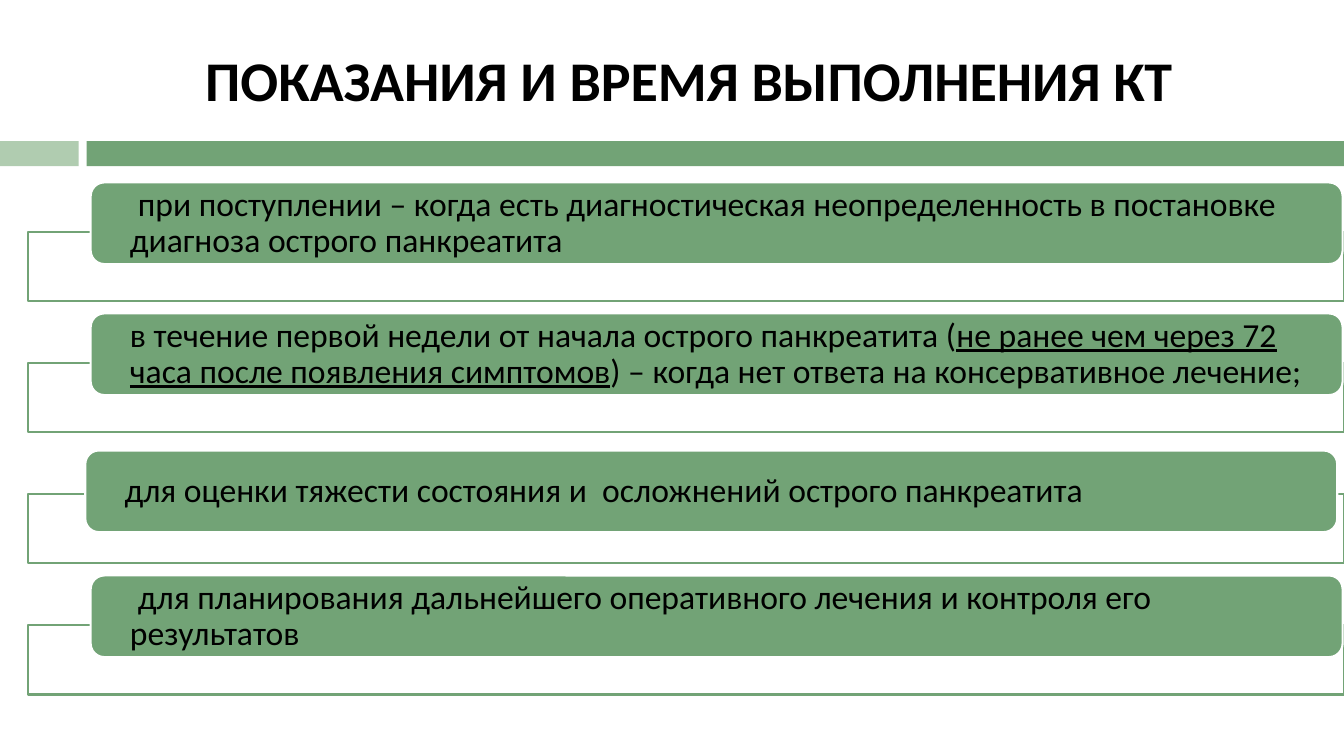
"""Build the slide on indications for and timing of CT."""
import dataclasses

import lxml.etree
import pptx
import pptx.dml.color
import pptx.enum.shapes
import pptx.enum.text
import pptx.oxml.ns
import pptx.util

SHAPES = pptx.enum.shapes.MSO_SHAPE
WIDTH = pptx.util.Inches(13.333)
HEIGHT = pptx.util.Inches(7.5)
ROW_PITCH = 17.33
FRAME_TOP = 30.67
CARD_TOP = 24.13


@dataclasses.dataclass(frozen=True)
class Theme:
    """Colours, font and sizes of the slide."""
    green: str = "72A376"
    pale_green: str = "B0CCB0"
    white: str = "FFFFFF"
    black: str = "000000"
    font: str = "Calibri"
    title_size: int = 40
    body_size: int = 24
    line_width: float = 1.5


@dataclasses.dataclass(frozen=True)
class Indication:
    """Spans of one card, the underlined one's index, first-line indent and card shift."""
    spans: tuple
    underlined: int = -1
    indent: float = 0
    shift: tuple = (0, 0)


THEME = Theme()
INDICATIONS = (
    Indication(("при поступлении – когда есть диагностическая неопределенность "
                "в постановке диагноза острого панкреатита",), indent=0.08),
    Indication(("в течение первой недели от начала острого панкреатита (",
                "не ранее чем через 72 часа после появления симптомов",
                ") – когда нет ответа на консервативное лечение;"), underlined=1),
    Indication(("для оценки тяжести состояния и  осложнений острого панкреатита",),
               shift=(-0.4, 0.8)),
    Indication(("для планирования дальнейшего оперативного лечения "
                "и контроля его результатов",), indent=0.08),
)


def place(left, top, width, height):
    """Turn percentages of the slide into lengths."""
    return (round(WIDTH * left / 100), round(HEIGHT * top / 100),
            round(WIDTH * width / 100), round(HEIGHT * height / 100))


def rgb(colour):
    """Return a colour object for a hex string."""
    return pptx.dml.color.RGBColor.from_string(colour)


def style_font(font, size, bold=False):
    """Give a font the theme's face and text colour."""
    font.name = THEME.font
    font.size = pptx.util.Pt(size)
    font.bold = bold
    font.color.rgb = rgb(THEME.black)


def add_block(page, kind, area, fill, line=None):
    """Add a flat filled shape, outlined if a line colour is given."""
    block = page.shapes.add_shape(kind, *place(*area))
    block.shadow.inherit = False
    block.fill.solid()
    block.fill.fore_color.rgb = rgb(fill)
    if line:
        block.line.color.rgb = rgb(line)
        block.line.width = pptx.util.Pt(THEME.line_width)
    else:
        block.line.fill.background()
    return block


def add_title(page, text):
    """Place and format the title."""
    title = page.shapes.title
    title.left, title.top, title.width, title.height = place(6.67, 3.33, 89.17, 14.4)
    title.text_frame.text = text
    title.text_frame.vertical_anchor = pptx.enum.text.MSO_ANCHOR.MIDDLE
    para = title.text_frame.paragraphs[0]
    para.alignment = pptx.enum.text.PP_ALIGN.CENTER
    style_font(para.font, THEME.title_size, bold=True)


def add_frame(page, row):
    """Add the slightly transparent outlined frame behind a card."""
    frame = add_block(page, SHAPES.RECTANGLE,
                      (2.1, FRAME_TOP + row * ROW_PITCH, 97.9, 9.2),
                      THEME.white, THEME.green)
    colour = frame.fill._xPr.find(".//" + pptx.oxml.ns.qn("a:srgbClr"))
    lxml.etree.SubElement(colour, pptx.oxml.ns.qn("a:alpha"), val="90000")


def add_card(page, row, indication):
    """Add a rounded card holding one indication."""
    across, down = indication.shift
    card = add_block(page, SHAPES.ROUNDED_RECTANGLE,
                     (6.75 + across, CARD_TOP + row * ROW_PITCH + down, 93.15, 10.8),
                     THEME.green, THEME.white)
    box = card.text_frame
    box.word_wrap = True
    box.vertical_anchor = pptx.enum.text.MSO_ANCHOR.MIDDLE
    box.margin_left = box.margin_right = pptx.util.Inches(0.35)
    box.margin_top = box.margin_bottom = 0
    para = box.paragraphs[0]
    para.alignment = pptx.enum.text.PP_ALIGN.LEFT
    para.line_spacing = 0.9
    para._p.get_or_add_pPr().set("indent", str(pptx.util.Inches(indication.indent)))
    style_font(para.font, THEME.body_size)
    for index, text in enumerate(indication.spans):
        span = para.add_run()
        span.text = text
        if index == indication.underlined:
            span.font.underline = True


def main():
    """Build and save the deck."""
    deck = pptx.Presentation()
    deck.slide_width, deck.slide_height = WIDTH, HEIGHT
    page = deck.slides.add_slide(deck.slide_layouts.get_by_name("Title Only"))
    add_block(page, SHAPES.RECTANGLE, (0, 18.67, 5.85, 3.33), THEME.pale_green)
    add_block(page, SHAPES.RECTANGLE, (6.45, 18.67, 93.55, 3.33), THEME.green)
    add_title(page, "ПОКАЗАНИЯ И ВРЕМЯ ВЫПОЛНЕНИЯ КТ")
    for row, indication in enumerate(INDICATIONS):
        add_frame(page, row)
        add_card(page, row, indication)
    deck.save("out.pptx")


if __name__ == "__main__":
    main()
